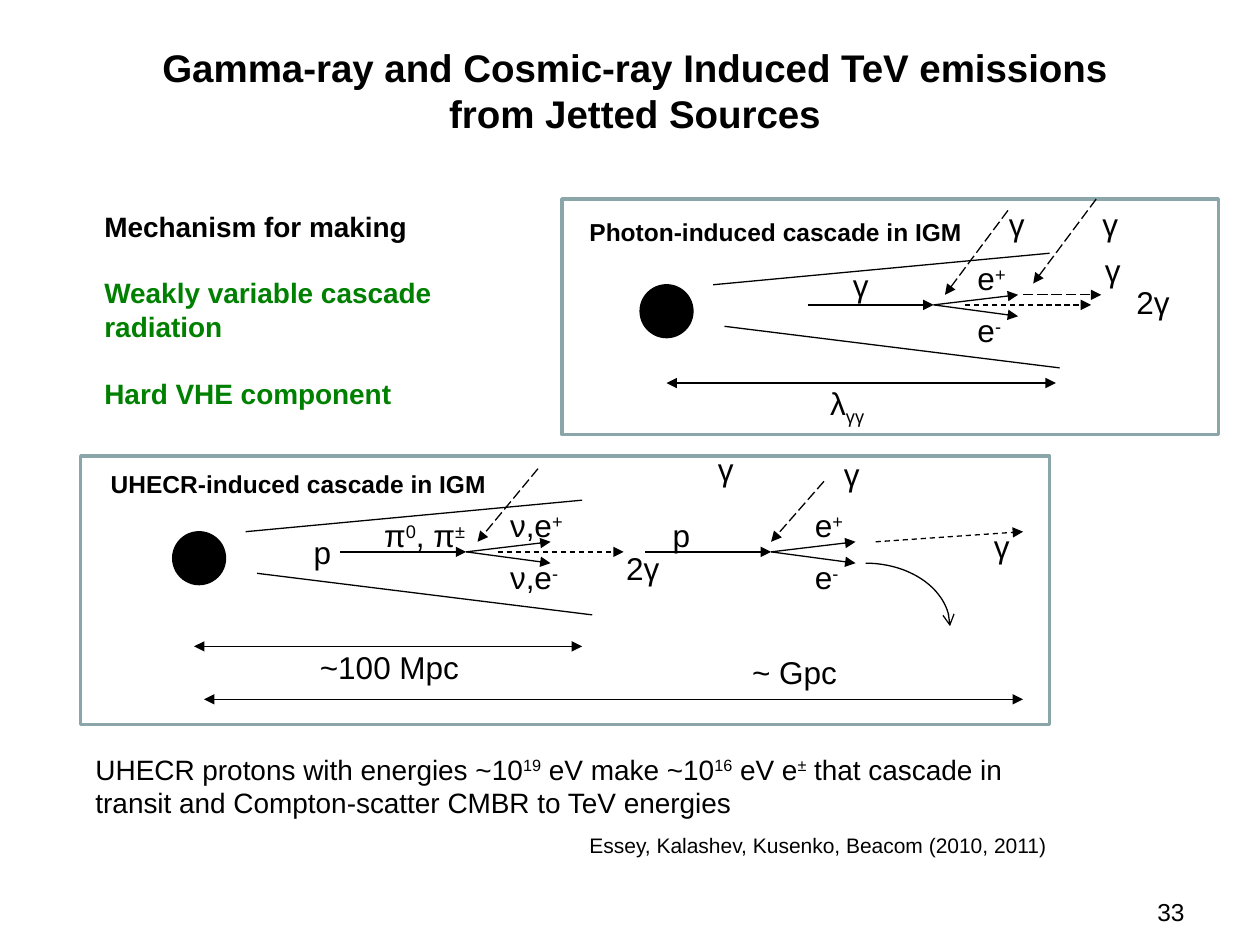
from math import cos, pi, sin
from lxml.etree import SubElement
from pptx import Presentation
from pptx.dml.color import RGBColor
from pptx.enum.dml import MSO_LINE
from pptx.enum.shapes import MSO_CONNECTOR, MSO_SHAPE
from pptx.enum.text import MSO_AUTO_SIZE, PP_ALIGN
from pptx.oxml.ns import qn
from pptx.util import Pt

PX = 9144  # 100 px to the inch
BLACK = RGBColor(0x00, 0x00, 0x00)
GREEN = RGBColor(0x00, 0x80, 0x00)
FRAME = RGBColor(0x8A, 0xA6, 0xA8)
DASH, LONG = MSO_LINE.DASH, MSO_LINE.LONG_DASH


class Canvas:
    font = "Arial"
    thin = 0.75

    def __init__(self, slide):
        self.slide = slide
        self.shapes = slide.shapes

    def text(self, x, y, w, h, *lines, size=18, bold=False, wrap=False,
             align=PP_ALIGN.LEFT, gap=0, base=30, grow=True):
        """Each line is a string or (string, colour); ^ starts and ends a raised part."""
        frame = self.shapes.add_textbox(x * PX, y * PX, w * PX, h * PX).text_frame
        frame.word_wrap = wrap
        if grow:
            frame.auto_size = MSO_AUTO_SIZE.SHAPE_TO_FIT_TEXT
        form = {"name": self.font, "size": Pt(size), "bold": bold}
        for i, line in enumerate(lines):
            words, tint = line if isinstance(line, tuple) else (line, BLACK)
            para = frame.add_paragraph() if i else frame.paragraphs[0]
            para.alignment = align
            if i and gap:
                para.space_before = Pt(gap)
            for j, part in enumerate(words.split("^")):
                for k, piece in enumerate(part.split("\n")):
                    if k:
                        para.add_line_break()
                    if not piece:
                        continue
                    run = para.add_run()
                    run.text = piece
                    for key, value in form.items():
                        setattr(run.font, key, value)
                    run.font.color.rgb = tint
                    if j % 2:
                        run._r.get_or_add_rPr().set("baseline", str(base * 1000))

    def stroke(self, item, tint=BLACK, width=thin, dash=None, head=None, tail=None):
        line = item.line
        line.color.rgb = tint
        for key, value in {"width": Pt(width), "dash_style": dash}.items():
            setattr(line, key, value)
        for tag, kind in (("a:headEnd", head), ("a:tailEnd", tail)):
            if kind:
                SubElement(line._get_or_add_ln(), qn(tag), type=kind)

    def line(self, x1, y1, x2, y2, **form):
        link = self.shapes.add_connector(
            MSO_CONNECTOR.STRAIGHT, x1 * PX, y1 * PX, x2 * PX, y2 * PX)
        self.stroke(link, **form)
        SubElement(link._element.spPr, qn("a:effectLst"))

    def arrow(self, x1, y1, x2, y2, **form):
        self.line(x1, y1, x2, y2, tail="triangle", **form)

    def span(self, x1, x2, y):
        self.arrow(x1, y, x2, y, head="triangle")

    def ball(self, x, y, d):
        ball = self.shapes.add_shape(MSO_SHAPE.OVAL, x * PX, y * PX, d * PX, d * PX)
        ball.shadow.inherit = False
        ball.fill.solid()
        ball.fill.fore_color.rgb = BLACK
        self.stroke(ball)

    def box(self, x, y, w, h):
        box = self.shapes.add_shape(MSO_SHAPE.RECTANGLE, x * PX, y * PX, w * PX, h * PX)
        box.shadow.inherit = False
        box.fill.background()
        self.stroke(box, tint=FRAME, width=2)

    def bend(self, x, y, w, h, steps=24):
        """Quarter ellipse that runs right and then down."""
        turns = [i * pi / 2 / steps for i in range(steps + 1)]
        dots = [(round((x + w * sin(t)) * PX), round((y + h * (1 - cos(t))) * PX))
                for t in turns]
        path = self.shapes.build_freeform(*dots[0])
        path.add_line_segments(dots[1:], close=False)
        curve = path.convert_to_shape()
        curve.shadow.inherit = False
        curve.fill.background()
        self.stroke(curve, tail="arrow")

    def gamma(self, x, y, w=40, words="γ"):
        self.text(x, y, w, 40, words, wrap=True)

    def pair(self, x, y, lead="e", extra=0):
        """A particle comes in and splits into two charged ones."""
        self.arrow(x - 100, y, x, y)
        for sign, end, top, w in (("+", -8, -41, 44), ("-", 9, 0, 40)):
            self.arrow(x, y, x + 67, y + end)
            self.text(x + 25, y + top, w + extra, 40, f"{lead}^{sign}")

    def jet(self, x, y, **form):
        """Source, its cone, and the first split inside."""
        self.ball(x, y, 42)
        self.line(x + 58, y, x + 325, y - 25)
        self.line(x + 67, y + 33, x + 333, y + 66)
        self.pair(x + 233, y + 16, **form)
        self.arrow(x + 258, y + 16, x + 358, y + 16, dash=DASH)


def main():
    deck = Presentation()
    deck.slide_width, deck.slide_height = 1000 * PX, 750 * PX
    art = Canvas(deck.slides.add_slide(deck.slide_layouts[6]))

    # Title and claims
    art.text(8, 30, 992, 75,
             "Gamma-ray and Cosmic-ray Induced TeV emissions\nfrom Jetted Sources",
             size=22, bold=True, wrap=True, align=PP_ALIGN.CENTER, grow=False)
    art.text(73, 161, 311, 172, "Mechanism for making",
             ("Weakly variable cascade radiation", GREEN),
             ("Hard VHE component", GREEN),
             size=16, bold=True, wrap=True, gap=19)

    # Photon panel
    art.box(446, 158, 521, 187)
    art.text(458, 167, 317, 34, "Photon-induced cascade in IGM", size=14, bold=True)
    art.jet(508, 226)
    for x, y in ((800, 167), (870, 158)):
        art.arrow(x, y, x - 50, y + 67, dash=LONG)
    art.arrow(812, 234, 874, 234, dash=LONG)
    for x, y in ((791, 158), (865, 158), (867, 194)):
        art.gamma(x, y)
    art.gamma(667, 206, 90)
    art.gamma(892, 220, 75, "2γ")
    art.span(529, 838, 304)
    art.text(649, 300, 47, 40, "λ^γγ", base=-25)

    # Cosmic-ray panel
    art.box(64, 362, 769, 213)
    art.text(78, 367, 331, 34, "UHECR-induced cascade in IGM", size=14, bold=True)
    art.jet(137, 422, lead="ν,e", extra=20)
    art.pair(612, 438)
    art.arrow(427, 372, 379, 430, dash=LONG)
    art.arrow(654, 382, 612, 430, dash=LONG)
    art.arrow(695, 430, 812, 422, dash=DASH)
    art.bend(687, 447, 67, 50)
    for x, y in ((239, 418), (524, 405)):
        art.text(x, y, 34, 40, "p")
    art.gamma(295, 405, 90, "π^0^, π^±")
    art.gamma(487, 431, 75, "2γ")
    for x, y in ((560, 352), (660, 356), (779, 413)):
        art.gamma(x, y)
    art.span(154, 462, 513)
    art.text(244, 509, 131, 40, "~100 Mpc")
    art.span(162, 812, 555)
    art.text(587, 513, 88, 40, "~ Gpc")

    # Summary, citation and page number
    art.text(66, 592, 796, 64,
             "UHECR protons with energies ~10^19^ eV make ~10^16^ eV e^±^ that cascade "
             "in transit and Compton-scatter CMBR to TeV energies", size=16, wrap=True)
    art.text(458, 656, 387, 30, "Essey, Kalashev, Kusenko, Beacom (2010, 2011)",
             size=12, wrap=True)
    art.text(717, 707, 233, 35, "33", size=14, wrap=True,
             align=PP_ALIGN.RIGHT, grow=False)

    deck.save("out.pptx")


if __name__ == "__main__":
    main()
